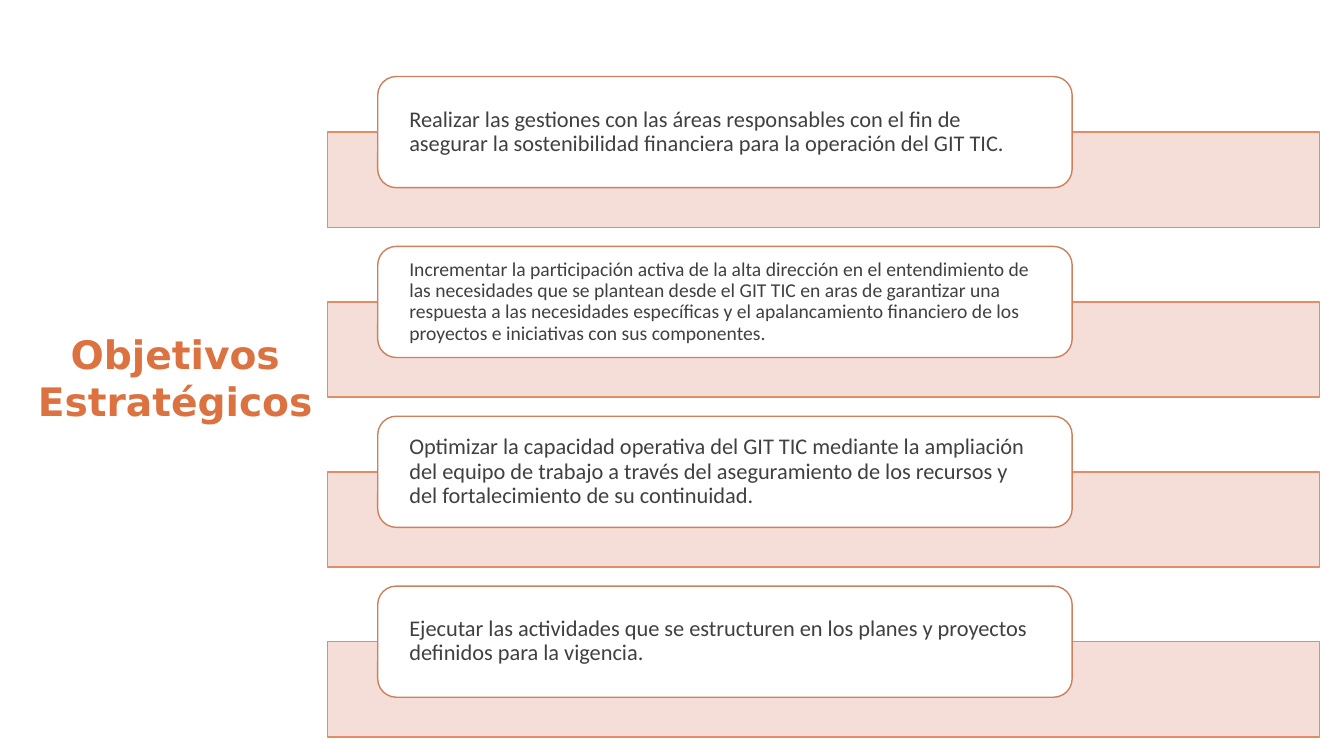
from lxml import etree
from pptx import Presentation
from pptx.dml.color import RGBColor
from pptx.enum.shapes import MSO_SHAPE
from pptx.enum.text import MSO_ANCHOR, MSO_AUTO_SIZE, PP_ALIGN
from pptx.oxml.ns import qn
from pptx.util import Cm, Pt

RECT = MSO_SHAPE.RECTANGLE
ROUND = MSO_SHAPE.ROUNDED_RECTANGLE
TOP = MSO_ANCHOR.TOP
MIDDLE = MSO_ANCHOR.MIDDLE
FIXED = MSO_AUTO_SIZE.NONE
LEFT = PP_ALIGN.LEFT
CENTER = PP_ALIGN.CENTER

GOALS = [
    ("Realizar las gestiones con las áreas responsables con el fin de asegurar "
     "la sostenibilidad financiera para la operación del GIT TIC.", 16),
    ("Incrementar la participación activa de la alta dirección en el "
     "entendimiento de las necesidades que se plantean desde el GIT TIC en aras "
     "de garantizar una respuesta a las necesidades específicas y el "
     "apalancamiento financiero de los proyectos e iniciativas con sus "
     "componentes.", 14),
    ("Optimizar la capacidad operativa del GIT TIC mediante la ampliación del "
     "equipo de trabajo a través del aseguramiento de los recursos y del "
     "fortalecimiento de su continuidad.", 16),
    ("Ejecutar las actividades que se estructuren en los planes y proyectos "
     "definidos para la vigencia.", 16),
]


def color(code):
    return RGBColor.from_string(code)


def add_run(para, text, font, size, code, bold=False):
    run = para.add_run()
    run.text = text
    run.font.name = font
    run.font.size = Pt(size)
    run.font.bold = bold
    run.font.color.rgb = color(code)


def add_box(slide, kind, x, y, w, h, fill, line):
    box = slide.shapes.add_shape(kind, Cm(x), Cm(y), Cm(w), Cm(h))
    box.shadow.inherit = False
    box.fill.solid()
    box.fill.fore_color.rgb = color(fill)
    box.line.color.rgb = color(line)
    box.line.width = Pt(1)
    return box


def set_alpha(shape, share):
    tint = shape.fill._xPr.find(qn("a:solidFill"))[0]
    etree.SubElement(tint, qn("a:alpha")).set("val", str(share * 1000))


def put_title(slide, x, y, w, h):
    title = slide.shapes.title
    title.left, title.top = Cm(x), Cm(y)
    title.width, title.height = Cm(w), Cm(h)
    frame = title.text_frame
    frame.word_wrap = True
    frame.auto_size = FIXED
    frame.vertical_anchor = TOP
    para = frame.paragraphs[0]
    para.alignment = CENTER
    add_run(para, "Objetivos Estratégicos", "DejaVu Sans", 28, "DC7240", True)


def put_goal(slide, x, y, w, text, size):
    band = add_box(slide, RECT, x, y + 1.4, w, 2.4, "F4DBD3", "E38D67")
    set_alpha(band, 90)
    card = add_box(slide, ROUND, x + 1.26, y, w * 0.7, 2.8, "FFFFFF", "CE805D")
    frame = card.text_frame
    frame.word_wrap = True
    frame.vertical_anchor = MIDDLE
    frame.margin_left = frame.margin_right = Cm(0.66)
    frame.margin_top = frame.margin_bottom = 0
    para = frame.paragraphs[0]
    para.alignment = LEFT
    para.line_spacing = 0.9
    add_run(para, text, "Calibri", size, "404040")


def put_goals(slide, x, y, w, step):
    for row, (text, size) in enumerate(GOALS):
        put_goal(slide, x, y + row * step, w, text, size)


def main():
    deck = Presentation()
    deck.slide_width, deck.slide_height = Cm(33.87), Cm(19.05)
    slide = deck.slides.add_slide(deck.slide_layouts[5])
    put_title(slide, -0.4, 8.2, 9.63, 2.64)
    put_goals(slide, 8.26, 1.93, 25, 4.28)
    deck.save("out.pptx")


if __name__ == "__main__":
    main()
